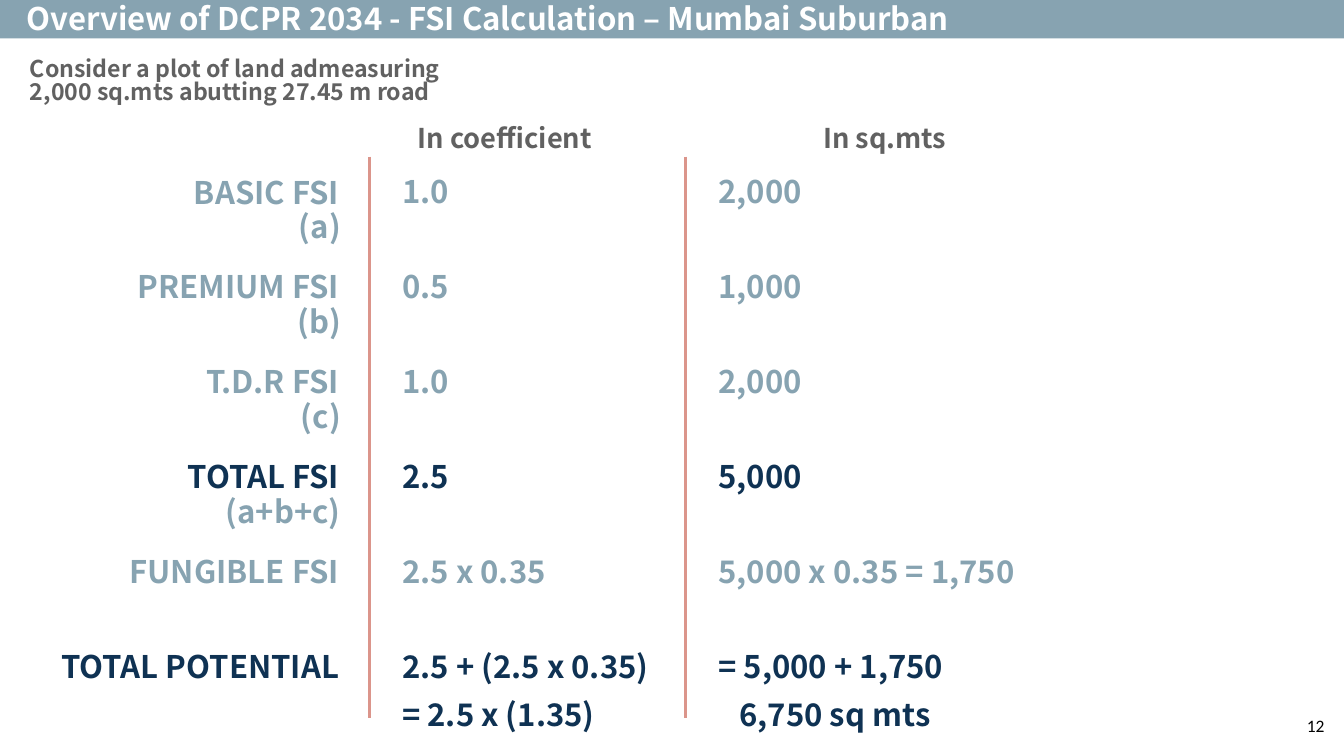
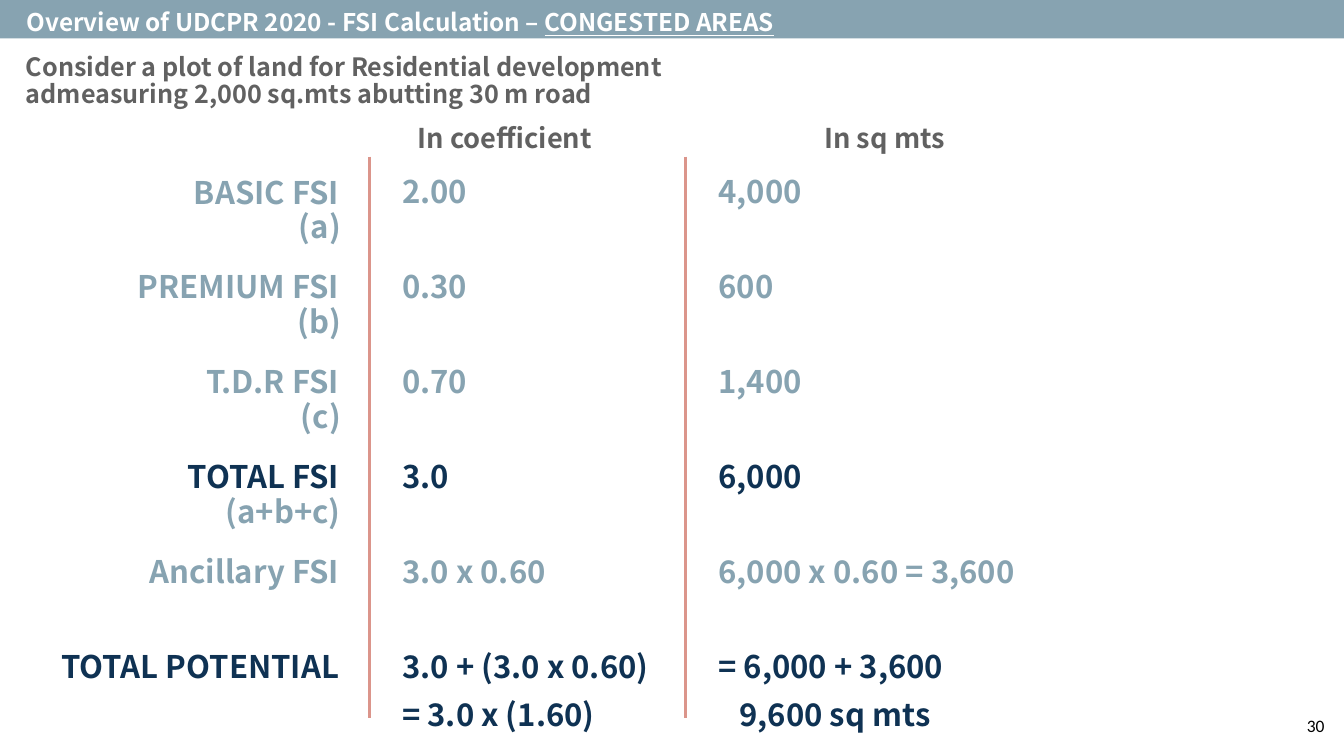
from dataclasses import dataclass
from typing import NamedTuple

from lxml.etree import SubElement
from pptx import Presentation
from pptx.dml.color import RGBColor
from pptx.enum.shapes import MSO_CONNECTOR as Connector, MSO_SHAPE as Preset
from pptx.enum.text import MSO_ANCHOR as Anchor, MSO_AUTO_SIZE as AutoSize, PP_ALIGN as Align
from pptx.oxml.ns import qn
from pptx.util import Inches, Pt

# Shared style
WIDTH, HEIGHT = 19.21, 10.79
FONT, NUMBER_FONT = "Noto Sans CJK KR", "Calibri"
BLUE, NAVY, GREY, CORAL, WHITE, BLACK = "87A3B1", "0F3253", "616161", "DB958B", "FFFFFF", "000000"
LINE_RATIO = 1.09
ROW_SIZE, ROW_PITCH, LINE_GAP = 32, 97.7, 14.4

# Grid: two value columns, each opened by a divider
COLUMN_LEFT, COLUMN_PITCH, VALUE_INSET = 5.28, 4.52, 0.37
ROWS_TOP, DIVIDER_TOP, DIVIDER_BOTTOM = 2.47, 2.24, 10.26
LABEL_RIGHT = 4.95
HEADER_LEFTS = (4.05, 9.48)
ROW_COLORS = (BLUE, BLUE, BLUE, NAVY, BLUE, NAVY)
ROW_KEYS = ("(a)", "(b)", "(c)", "(a+b+c)")


class Box(NamedTuple):
    left: float
    top: float
    width: float
    height: float


@dataclass(frozen=True)
class Line:
    text: str
    color: str
    gap: float = 0
    indent: float = 0
    underlined: str = ""


@dataclass(frozen=True)
class ValueColumn:
    header: str
    rows: tuple[str, ...]
    result: str
    result_indent: float = 0


@dataclass(frozen=True)
class FsiSlide:
    title: Line
    title_size: float
    title_top: float
    premise: str
    premise_size: float
    premise_ratio: float
    premise_box: Box
    extra_label: str
    columns: tuple[ValueColumn, ValueColumn]
    number: str


def color(hex_code: str) -> RGBColor:
    return RGBColor.from_string(hex_code)


def place(shape, box: Box) -> None:
    shape.left, shape.top, shape.width, shape.height = (Inches(length) for length in box)


def write_text(shape, lines: list[Line], *, size: float, align=Align.LEFT, anchor=Anchor.TOP,
               font: str = FONT, bold: bool = True, ratio: float = LINE_RATIO) -> None:
    """Fill a text box or placeholder, one paragraph for each line."""
    frame = shape.text_frame
    frame.word_wrap = True
    frame.auto_size = AutoSize.NONE
    frame.vertical_anchor = anchor
    for index, line in enumerate(lines):
        paragraph = frame.add_paragraph() if index else frame.paragraphs[0]
        paragraph.alignment = align
        paragraph.line_spacing = Pt(round(size * ratio, 1))
        paragraph.space_before, paragraph.space_after = Pt(line.gap), Pt(0)
        properties = paragraph._p.get_or_add_pPr()
        properties.set("marL", str(Inches(line.indent)))
        properties.set("indent", "0")
        SubElement(properties, qn("a:buNone"))
        for text, underline in ((line.text, None), (line.underlined, True)):
            if text:
                run = paragraph.add_run()
                run.text = text
                run.font.name, run.font.size = font, Pt(size)
                run.font.bold, run.font.underline = bold, underline
                run.font.color.rgb = color(line.color)


def add_text(slide, box: Box, lines: list[Line], **text_format) -> None:
    shape = slide.shapes.add_textbox(*(Inches(length) for length in box))
    write_text(shape, lines, **text_format)


def row_lines(texts: tuple[str, ...], colors: tuple[str, ...]) -> list[Line]:
    """Lines spaced so that their baselines fall on the row pitch."""
    row_gap = round(ROW_PITCH - ROW_SIZE * LINE_RATIO, 1)
    return [Line(text, shade, row_gap if index else 0)
            for index, (text, shade) in enumerate(zip(texts, colors))]


def add_divider(slide, left: float) -> None:
    ends = (Inches(length) for length in (left, DIVIDER_TOP, left, DIVIDER_BOTTOM))
    divider = slide.shapes.add_connector(Connector.STRAIGHT, *ends)
    divider.line.color.rgb = color(CORAL)
    divider.line.width = Pt(3)
    SubElement(divider._element.spPr, qn("a:effectLst"))


def add_title(slide, content: FsiSlide) -> None:
    band = slide.shapes.add_shape(Preset.RECTANGLE, 0, 0, Inches(WIDTH), Inches(0.55))
    band.shadow.inherit = False
    band.fill.solid()
    band.fill.fore_color.rgb = color(BLUE)
    band.line.fill.background()
    title = slide.shapes.title
    title.element.addprevious(band.element)
    place(title, Box(0.28, content.title_top, 18, 0.71))
    write_text(title, [content.title], size=content.title_size)


def add_labels(slide, extra_label: str) -> None:
    labels = ("BASIC FSI", "PREMIUM FSI", "T.D.R FSI", "TOTAL FSI", extra_label, "TOTAL POTENTIAL")
    body = slide.placeholders[1]
    place(body, Box(0, ROWS_TOP, LABEL_RIGHT, 7.51))
    write_text(body, row_lines(labels, ROW_COLORS), size=ROW_SIZE, align=Align.RIGHT)
    keys = row_lines(ROW_KEYS, (BLUE,) * len(ROW_KEYS))
    add_text(slide, Box(LABEL_RIGHT - 2, ROWS_TOP + 0.5, 2.02, 7), keys,
             size=ROW_SIZE, align=Align.RIGHT)


def add_column(slide, index: int, column: ValueColumn) -> None:
    left = COLUMN_LEFT + index * COLUMN_PITCH
    add_divider(slide, left)
    result = Line(column.result, NAVY, LINE_GAP, column.result_indent)
    add_text(slide, Box(left + VALUE_INSET, ROWS_TOP, 5.1, 8.3),
             row_lines(column.rows, ROW_COLORS) + [result], size=ROW_SIZE)
    add_text(slide, Box(HEADER_LEFTS[index], 1.52, 6.33, 0.95), [Line(column.header, GREY)],
             size=28, align=Align.CENTER, anchor=Anchor.MIDDLE)


def build_slide(presentation, content: FsiSlide) -> None:
    slide = presentation.slides.add_slide(presentation.slide_layouts[1])
    add_title(slide, content)
    add_labels(slide, content.extra_label)
    for index, column in enumerate(content.columns):
        add_column(slide, index, column)
    add_text(slide, content.premise_box, [Line(content.premise, GREY)], size=content.premise_size,
             anchor=Anchor.MIDDLE, ratio=content.premise_ratio)
    add_text(slide, Box(17.05, 10.17, 1.98, 0.61), [Line(content.number, BLACK)],
             size=18, align=Align.RIGHT, font=NUMBER_FONT, bold=False, ratio=1.22)


# Content
SLIDES = (
    FsiSlide(
        title=Line("Overview of DCPR 2034 - FSI Calculation – Mumbai Suburban", WHITE),
        title_size=32, title_top=-0.01,
        premise="Consider a plot of land admeasuring 2,000 sq.mts abutting 27.45 m road",
        premise_size=23.8, premise_ratio=0.99, premise_box=Box(0.33, 0.7, 6.33, 0.95),
        extra_label="FUNGIBLE FSI",
        columns=(
            ValueColumn("In coefficient",
                        ("1.0", "0.5", "1.0", "2.5", "2.5 x 0.35", "2.5 + (2.5 x 0.35)"),
                        "= 2.5 x (1.35)"),
            ValueColumn("In sq.mts",
                        ("2,000", "1,000", "2,000", "5,000", "5,000 x 0.35 = 1,750",
                         "= 5,000 + 1,750"),
                        "6,750 sq mts", 0.3),
        ),
        number="12",
    ),
    FsiSlide(
        title=Line("Overview of UDCPR 2020 - FSI Calculation – ", WHITE,
                   underlined="CONGESTED AREAS"),
        title_size=25, title_top=0.09,
        premise="Consider a plot of land for Residential development "
                "admeasuring 2,000 sq.mts abutting 30 m road",
        premise_size=25.9, premise_ratio=1.07, premise_box=Box(0.27, 0.69, 9.34, 0.95),
        extra_label="Ancillary FSI",
        columns=(
            ValueColumn("In coefficient",
                        ("2.00", "0.30", "0.70", "3.0", "3.0 x 0.60", "3.0 + (3.0 x 0.60)"),
                        "= 3.0 x (1.60)"),
            ValueColumn("In sq mts",
                        ("4,000", "600", "1,400", "6,000", "6,000 x 0.60 = 3,600",
                         "= 6,000 + 3,600"),
                        "9,600 sq mts", 0.3),
        ),
        number="30",
    ),
)


def main() -> None:
    presentation = Presentation()
    presentation.slide_width, presentation.slide_height = Inches(WIDTH), Inches(HEIGHT)
    for content in SLIDES:
        build_slide(presentation, content)
    presentation.save("out.pptx")


if __name__ == "__main__":
    main()
